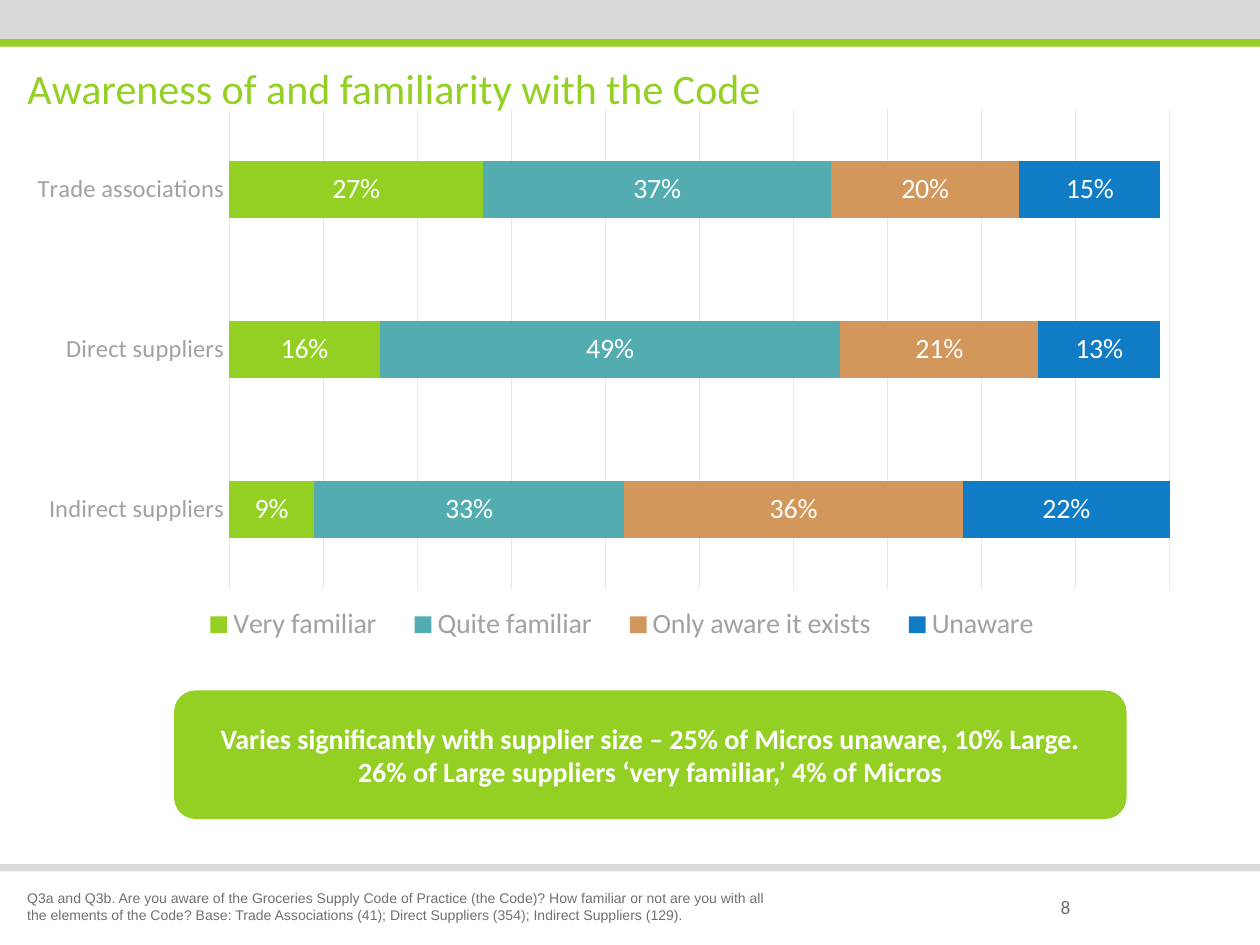
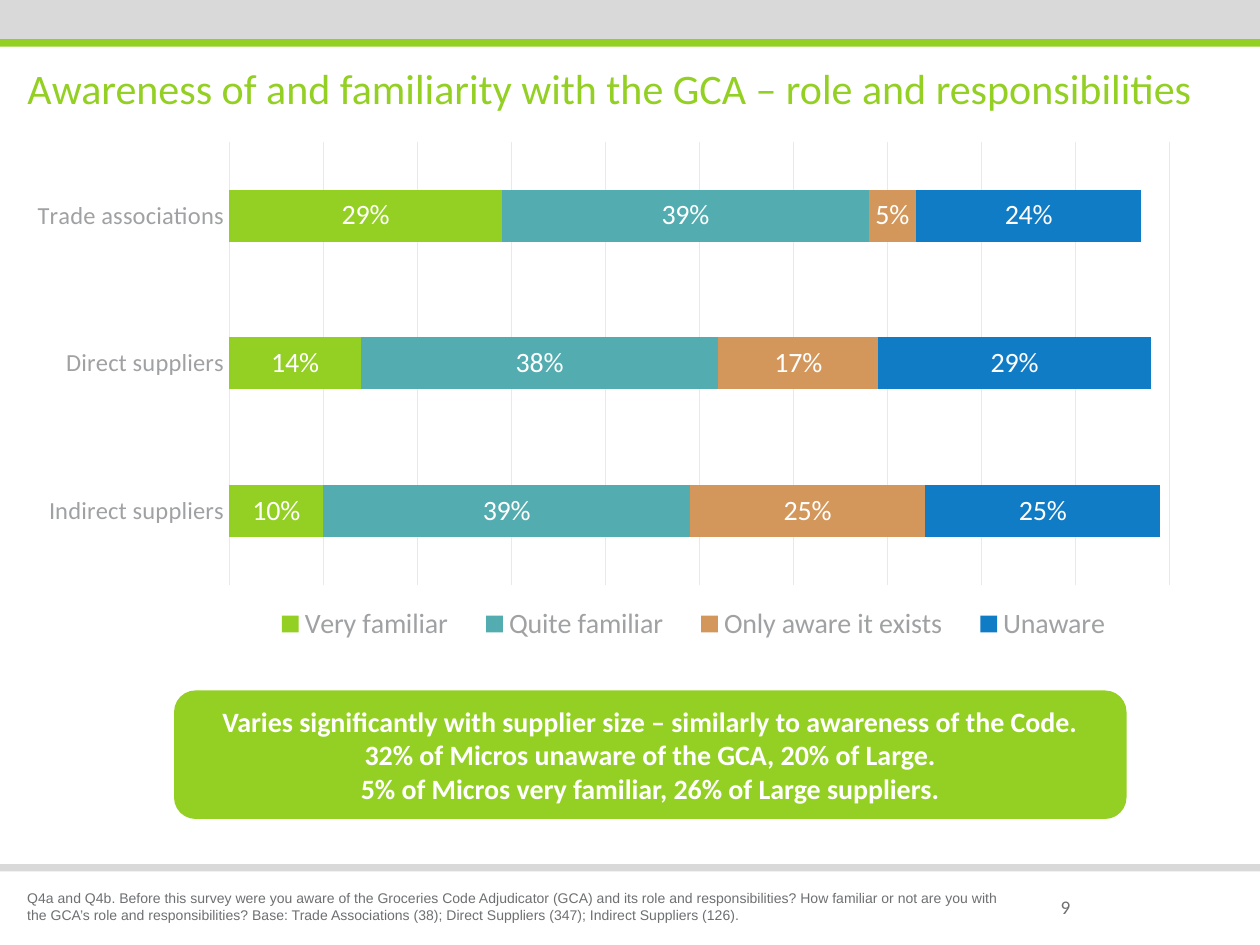
from dataclasses import dataclass

from lxml import etree
from pptx import Presentation
from pptx import util as u
from pptx.chart import data as chart_data
from pptx.dml import color
from pptx.enum import chart as chart_enum
from pptx.enum import shapes, text
from pptx.oxml import ns


@dataclass(frozen=True)
class Theme:
    green: str = "93D023"
    teal: str = "53ACAF"
    tan: str = "D3975B"
    blue: str = "117CC6"
    band: str = "D9D9D9"
    grid: str = "E9E9EA"
    label: str = "A0A1A3"
    small: str = "6D6F71"
    white: str = "FFFFFF"
    font: str = "Calibri"
    note_font: str = "Arial"
    title_size: int = 24
    large_size: int = 16
    category_size: int = 14
    number_size: int = 11
    note_size: int = 8


theme = Theme()


def style_font(font, size, rgb, name=theme.font, bold=False):
    font.size = u.Pt(size)
    font.color.rgb = color.RGBColor.from_string(rgb)
    font.name = name
    font.bold = bold


def set_layout(parent, index, target, fractions):
    for old_layout in parent.findall(ns.qn("c:layout")):
        parent.remove(old_layout)
    layout = etree.Element(ns.qn("c:layout"))
    manual = etree.SubElement(layout, ns.qn("c:manualLayout"))
    settings = [("layoutTarget", target)] if target else []
    settings += [("xMode", "edge"), ("yMode", "edge"), *zip("xywh", fractions)]
    for tag, value in settings:
        etree.SubElement(manual, ns.qn(f"c:{tag}")).set("val", str(value))
    parent.insert(index, layout)


categories = ["Trade associations", "Direct suppliers", "Indirect suppliers"]
answers = {
    "Very familiar": theme.green,
    "Quite familiar": theme.teal,
    "Only aware it exists": theme.tan,
    "Unaware": theme.blue,
}
pages = [
    {
        "number": 8,
        "title": "Awareness of and familiarity with the Code",
        "shares": [(0.27, 0.16, 0.09), (0.37, 0.49, 0.33), (0.2, 0.21, 0.36), (0.15, 0.13, 0.22)],
        "chart_top": 1.73,
        "chart_height": 11.81,
        "plot_height": 0.82,
        "legend": (0.14, 0.88, 0.74, 0.08),
        "callout": [
            "Varies significantly with supplier size – 25% of Micros unaware, 10% Large.",
            "26% of Large suppliers ‘very familiar,’ 4% of Micros",
        ],
        "note_width": 15.39,
        "note": "Q3a and Q3b. Are you aware of the Groceries Supply Code of Practice (the Code)? "
                "How familiar or not are you with all the elements of the Code? "
                "Base: Trade Associations (41); Direct Suppliers (354); Indirect Suppliers (129).",
    },
    {
        "number": 9,
        "title": "Awareness of and familiarity with the GCA – role and responsibilities",
        "shares": [(0.29, 0.14, 0.1), (0.39, 0.38, 0.39), (0.05, 0.17, 0.25), (0.24, 0.29, 0.25)],
        "chart_top": 2.41,
        "chart_height": 11.3,
        "plot_height": 0.79,
        "legend": (0.2, 0.86, 0.74, 0.08),
        "callout": [
            "Varies significantly with supplier size – similarly to awareness of the Code.",
            "32% of Micros unaware of the GCA, 20% of Large.",
            "5% of Micros very familiar, 26% of Large suppliers.",
        ],
        "note_width": 20.19,
        "note": "Q4a and Q4b. Before this survey were you aware of the Groceries Code Adjudicator (GCA) "
                "and its role and responsibilities? How familiar or not are you with the GCA’s role "
                "and responsibilities? Base: Trade Associations (38); Direct Suppliers (347); "
                "Indirect Suppliers (126).",
    },
]
bands = [(0, 0.79, theme.band), (17.42, 0.15, theme.band), (0.79, 0.2 - 0.05, theme.green)]

presentation = Presentation()
presentation.slide_width = u.Cm(25.4)
presentation.slide_height = u.Cm(19.05)
slide_layout = presentation.slide_layouts[5]

for page in pages:
    slide = presentation.slides.add_slide(slide_layout)

    if page is pages[0]:
        for position, (top, height, fill) in enumerate(bands):
            band = slide.shapes.add_shape(
                shapes.MSO_SHAPE.RECTANGLE, 0, u.Cm(top), presentation.slide_width, u.Cm(height))
            band.shadow.inherit = False
            band.fill.solid()
            band.fill.fore_color.rgb = color.RGBColor.from_string(fill)
            band.line.fill.background()
            slide_layout.shapes._spTree.insert(2 + position, band._element)

    title = slide.shapes.title
    title.left, title.top, title.width, title.height = u.Cm(0.3), u.Cm(1.12), u.Cm(24.61), u.Cm(1.3)
    title.text_frame.text = page["title"]
    title.text_frame.vertical_anchor = text.MSO_ANCHOR.MIDDLE
    title.text_frame.paragraphs[0].alignment = text.PP_ALIGN.LEFT
    style_font(title.text_frame.paragraphs[0].runs[0].font, theme.title_size, theme.green)

    values = chart_data.CategoryChartData(number_format="0%")
    values.categories = categories
    for answer, shares in zip(answers, page["shares"]):
        values.add_series(answer, shares)
    chart = slide.shapes.add_chart(
        chart_enum.XL_CHART_TYPE.BAR_STACKED, u.Cm(0.3), u.Cm(page["chart_top"]),
        u.Cm(24), u.Cm(page["chart_height"]), values).chart
    style_font(chart.font, 10, theme.small)
    chart.has_title = False

    plot = chart.plots[0]
    plot.gap_width = 182
    plot.overlap = 100
    plot.vary_by_categories = False
    for series, fill in zip(plot.series, answers.values()):
        series.format.fill.solid()
        series.format.fill.fore_color.rgb = color.RGBColor.from_string(fill)
        labels = series.data_labels
        labels.show_value = True
        labels.number_format = "0%"
        labels.number_format_is_linked = False
        labels.position = chart_enum.XL_LABEL_POSITION.CENTER
        style_font(labels.font, theme.large_size, theme.white)

    category_axis, value_axis = chart.category_axis, chart.value_axis
    category_axis.reverse_order = True
    category_axis.major_tick_mark = chart_enum.XL_TICK_MARK.NONE
    style_font(category_axis.tick_labels.font, theme.category_size, theme.label)
    value_axis.minimum_scale, value_axis.maximum_scale = 0, 1
    value_axis.major_unit = 0.1
    value_axis.has_major_gridlines = True
    value_axis.visible = False
    for line in (category_axis.format.line, value_axis.major_gridlines.format.line):
        line.color.rgb = color.RGBColor.from_string(theme.grid)
        line.width = u.Pt(0.75)

    chart.has_legend = True
    chart.legend.position = chart_enum.XL_LEGEND_POSITION.BOTTOM
    chart.legend.include_in_layout = False
    style_font(chart.legend.font, theme.large_size, theme.label)
    set_layout(chart.legend._element, 1, None, page["legend"])
    plot_area = chart._chartSpace.chart.plotArea
    set_layout(plot_area, 0, "inner", (0.18, 0.04, 0.79, page["plot_height"]))

    callout = slide.shapes.add_shape(
        shapes.MSO_SHAPE.ROUNDED_RECTANGLE, u.Cm(3.51), u.Cm(13.92), u.Cm(19.2), u.Cm(2.59))
    callout.shadow.inherit = False
    callout.fill.solid()
    callout.fill.fore_color.rgb = color.RGBColor.from_string(theme.green)
    callout.line.fill.background()
    callout.text_frame.text = "\n".join(page["callout"])
    callout.text_frame.vertical_anchor = text.MSO_ANCHOR.MIDDLE
    for paragraph in callout.text_frame.paragraphs:
        paragraph.alignment = text.PP_ALIGN.CENTER
        style_font(paragraph.runs[0].font, theme.large_size, theme.white, bold=True)

    footers = [
        (page["note"], 0.3, 17.81, page["note_width"], 0.94,
         theme.note_size, theme.note_font, text.MSO_ANCHOR.TOP),
        (str(page["number"]), 21.13, 17.63, 1.96, 1.32,
         theme.number_size, theme.font, text.MSO_ANCHOR.MIDDLE),
    ]
    for wording, left, top, width, height, size, font_name, anchor in footers:
        footer = slide.shapes.add_textbox(u.Cm(left), u.Cm(top), u.Cm(width), u.Cm(height))
        footer.text_frame.word_wrap = True
        footer.text_frame.vertical_anchor = anchor
        footer.text_frame.text = wording
        style_font(footer.text_frame.paragraphs[0].runs[0].font, size, theme.small, font_name)

presentation.save("out.pptx")
